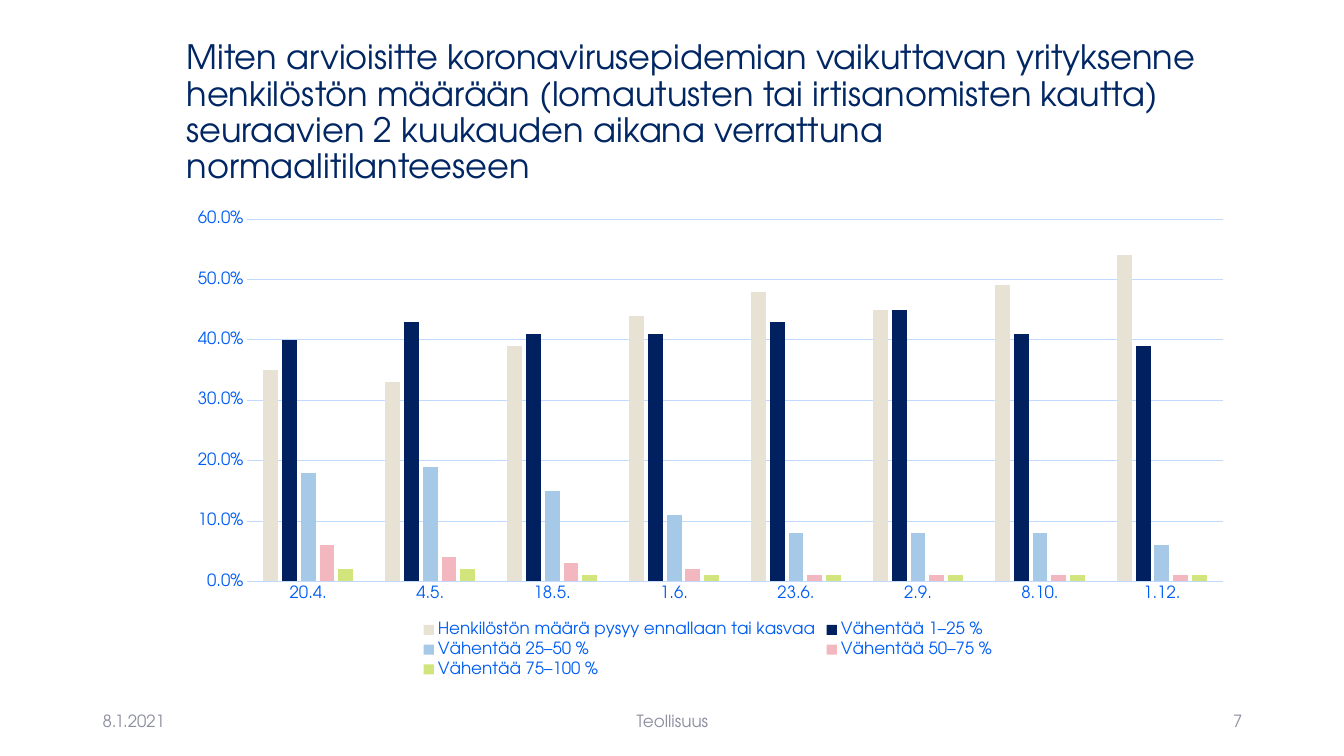
from dataclasses import dataclass

import pptx
import pptx.chart.data
import pptx.dml.color
import pptx.enum.chart
import pptx.enum.text
import pptx.util
from pptx.util import Inches

FONT = "TeX Gyre Adventor"
NAVY = "002663"
BLUE = "005DF3"
PALE_BLUE = "C1D9FF"
GREY = "8C8E9F"

ALIGN = pptx.enum.text.PP_ALIGN
MIDDLE = pptx.enum.text.MSO_ANCHOR.MIDDLE
CONTENT_LEFT, CONTENT_WIDTH = 1.75, 10.59


@dataclass
class FooterItem:
    text: str
    left: float
    width: float
    align: ALIGN


@dataclass
class Series:
    name: str
    color: str
    shares: list[float]


TITLE = (
    "Miten arvioisitte koronavirusepidemian vaikuttavan yrityksenne henkilöstön "
    "määrään (lomautusten tai irtisanomisten kautta) seuraavien 2 kuukauden aikana "
    "verrattuna normaalitilanteeseen"
)
FOOTER = [
    FooterItem("8.1.2021", 0.92, 3, ALIGN.LEFT),
    FooterItem("Teollisuus", 4.42, 4.5, ALIGN.CENTER),
    FooterItem("7", 9.42, 3, ALIGN.RIGHT),
]
DATES = ["20.4.", "4.5.", "18.5.", "1.6.", "23.6.", "2.9.", "8.10.", "1.12."]
SERIES = [
    Series("Henkilöstön määrä pysyy ennallaan tai kasvaa", "E8E2D5",
           [0.35, 0.33, 0.39, 0.44, 0.48, 0.45, 0.49, 0.54]),
    Series("Vähentää 1–25 % ", "002060",
           [0.4, 0.43, 0.41, 0.41, 0.43, 0.45, 0.41, 0.39]),
    Series("Vähentää 25–50 % ", "A5C9E7",
           [0.18, 0.19, 0.15, 0.11, 0.08, 0.08, 0.08, 0.06]),
    Series("Vähentää 50–75 % ", "F2B7BF",
           [0.06, 0.04, 0.03, 0.02, 0.01, 0.01, 0.01, 0.01]),
    Series("Vähentää 75–100 % ", "D1E57C",
           [0.02, 0.02, 0.01, 0.01, 0.01, 0.01, 0.01, 0.01]),
]


def rgb(color: str) -> pptx.dml.color.RGBColor:
    return pptx.dml.color.RGBColor.from_string(color)


def set_font(font, size: float, color: str) -> None:
    font.name = FONT
    font.size = pptx.util.Pt(size)
    font.bold = False
    font.color.rgb = rgb(color)


def set_line(line, color: str) -> None:
    line.color.rgb = rgb(color)
    line.width = pptx.util.Pt(0.75)


def add_title(page) -> None:
    title = page.shapes.title
    title.left, title.top = Inches(CONTENT_LEFT), Inches(0.4)
    title.width, title.height = Inches(CONTENT_WIDTH), Inches(1.45)
    frame = title.text_frame
    frame.text = TITLE
    frame.word_wrap = True
    frame.auto_size = pptx.enum.text.MSO_AUTO_SIZE.NONE
    frame.vertical_anchor = MIDDLE
    para = frame.paragraphs[0]
    para.alignment = ALIGN.LEFT
    para.line_spacing = 0.9
    para.space_before = pptx.util.Pt(0)
    set_font(para.font, 24, NAVY)


def add_footer_item(page, item: FooterItem) -> None:
    box = page.shapes.add_textbox(
        Inches(item.left), Inches(6.95), Inches(item.width), Inches(0.4))
    frame = box.text_frame
    frame.text = item.text
    frame.word_wrap = True
    frame.vertical_anchor = MIDDLE
    para = frame.paragraphs[0]
    para.alignment = item.align
    set_font(para.font, 12, GREY)


def add_staff_chart(page) -> None:
    data = pptx.chart.data.CategoryChartData(number_format="0.0%")
    data.categories = DATES
    for series in SERIES:
        data.add_series(series.name, series.shares)
    chart = page.shapes.add_chart(
        pptx.enum.chart.XL_CHART_TYPE.COLUMN_CLUSTERED, Inches(CONTENT_LEFT),
        Inches(2), Inches(CONTENT_WIDTH), Inches(4.76), data).chart
    chart.has_title = False
    set_font(chart.font, 10, NAVY)

    plot = chart.plots[0]
    plot.vary_by_categories = False
    plot.gap_width = 219
    plot.overlap = -27
    for column, series in zip(plot.series, SERIES):
        column.format.fill.solid()
        column.format.fill.fore_color.rgb = rgb(series.color)
        column.invert_if_negative = False

    dates, shares = chart.category_axis, chart.value_axis
    for axis in (dates, shares):
        axis.major_tick_mark = pptx.enum.chart.XL_TICK_MARK.NONE
        axis.minor_tick_mark = pptx.enum.chart.XL_TICK_MARK.NONE
        set_font(axis.tick_labels.font, 12, BLUE)
    set_line(dates.format.line, PALE_BLUE)
    shares.format.line.fill.background()
    shares.has_major_gridlines = True
    set_line(shares.major_gridlines.format.line, PALE_BLUE)
    shares.minimum_scale, shares.maximum_scale = 0, 0.6
    shares.major_unit = 0.1
    shares.tick_labels.number_format = "0.0%"
    shares.tick_labels.number_format_is_linked = False

    chart.has_legend = True
    chart.legend.position = pptx.enum.chart.XL_LEGEND_POSITION.BOTTOM
    chart.legend.include_in_layout = False
    set_font(chart.legend.font, 12, BLUE)


def main() -> None:
    deck = pptx.Presentation()
    deck.slide_width, deck.slide_height = Inches(13.33), Inches(7.5)
    page = deck.slides.add_slide(deck.slide_layouts.get_by_name("Title Only"))
    add_title(page)
    for item in FOOTER:
        add_footer_item(page, item)
    add_staff_chart(page)
    deck.save("out.pptx")


if __name__ == "__main__":
    main()
